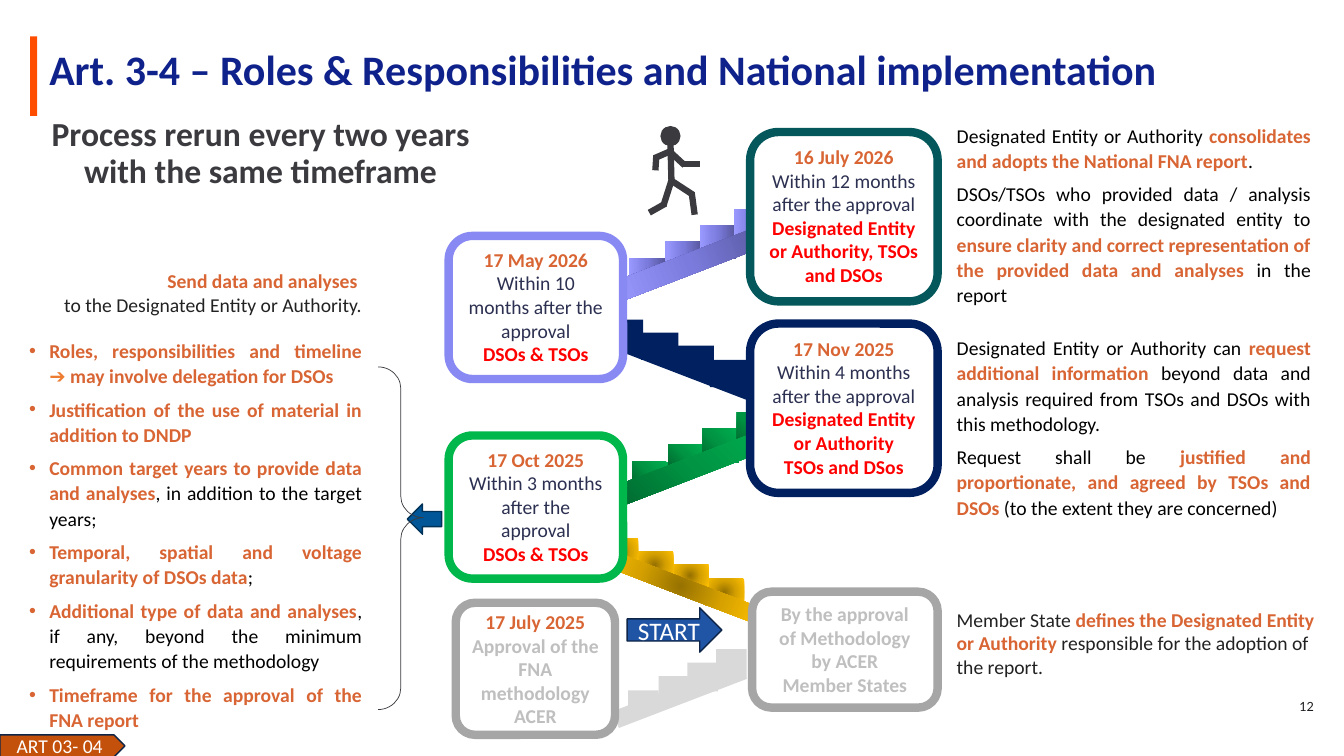
from dataclasses import dataclass
from typing import Any, Optional, Union

from lxml.etree import SubElement
from pptx import Presentation
from pptx.dml.color import RGBColor as Rgb
from pptx.enum.shapes import MSO_CONNECTOR as Connector, MSO_SHAPE as Preset
from pptx.enum.text import MSO_ANCHOR as Anchor, PP_ALIGN as Align
from pptx.oxml import parse_xml
from pptx.oxml.ns import nsdecls, qn
from pptx.util import Inches, Pt

COLORS = {
    "white": "FFFFFF", "black": "000000", "ink": "222222", "number": "1D1D20",
    "charcoal": "3A3A3F", "title": "0F218B", "bar": "FF4D00", "accent": "D86533",
    "pointer": "ED7D31", "deadline": "2C3051", "actor": "FF0000", "muted": "BFBFBF",
    "gray": "A6A6A6", "light": "D9D9D9", "green": "00B74C", "navy": "002060",
    "violet": "8989F4", "teal": "04585C", "back": "005696", "back_edge": "003258",
    "start": "2054A5", "edge": "0E2548", "tag": "C4510B",
}
BOLD_TONES = {"accent", "pointer", "actor", "muted", "title", "charcoal"}


@dataclass
class Gradient:
    stops: tuple[str, str, str]
    shade: str


@dataclass
class Para:
    spans: list[tuple[str, str]]  # (text, tone)
    size: float = 14
    font: str = "Calibri"
    align: Any = Align.LEFT
    spacing: Any = None
    after: float = 0
    bullet: bool = False


@dataclass
class Stairs:
    left: float
    top: float
    scale: float
    profile: list[tuple[float, float, float, float, float]]
    fill: Union[str, Gradient]


@dataclass
class Milestone:
    box: tuple[float, float, float, float]
    edge: str
    lines: list[tuple[str, str]]
    anchor: Any = Anchor.TOP
    corner: float = 0.167


def apply(target: Any, values: dict[str, Any]) -> None:
    for key, value in values.items():
        setattr(target, key, value)


def rgb(tone: str) -> Rgb:
    return Rgb.from_string(COLORS[tone])


def write(holder: Any, paras: list[Para], anchor: Any = Anchor.TOP, wrap: bool = True) -> None:
    frame = holder.text_frame
    apply(frame, {"word_wrap": wrap, "vertical_anchor": anchor})
    for index, para in enumerate(paras):
        line = frame.paragraphs[0] if index == 0 else frame.add_paragraph()
        apply(line, {"alignment": para.align, "line_spacing": para.spacing})
        if para.after:
            line.space_after = Pt(para.after)
        if para.bullet:
            props = line._p.get_or_add_pPr()
            props.set("marL", str(Inches(0.39)))
            props.set("indent", str(Inches(-0.2)))
            SubElement(props, qn("a:buFont"), typeface="Arial")
            SubElement(props, qn("a:buChar"), char="•")
        for text, tone in para.spans:
            for part, piece in enumerate(text.split("\n")):
                if part:
                    line.add_line_break()
                if piece:
                    run = line.add_run()
                    run.text = piece
                    apply(run.font, {"size": Pt(para.size), "name": para.font,
                                     "bold": tone in BOLD_TONES})
                    run.font.color.rgb = rgb(tone)


def add_text(slide: Any, box: tuple, paras: list[Para], anchor: Any = Anchor.TOP) -> None:
    write(slide.shapes.add_textbox(*map(Inches, box)), paras, anchor)


def add_block(slide: Any, preset: Any, box: tuple, fill: Union[str, Gradient, None],
              edge: Optional[str] = None, weight: float = 1, angle: float = 0,
              adjust: tuple = ()) -> Any:
    block = slide.shapes.add_shape(preset, *map(Inches, box))
    apply(block, {"rotation": angle})
    block.shadow.inherit = False
    for index, value in enumerate(adjust):
        block.adjustments[index] = value
    if isinstance(fill, Gradient):
        stops = "".join(f'<a:gs pos="{pos}"><a:srgbClr val="{color}"/></a:gs>'
                        for pos, color in zip((0, 50000, 100000), fill.stops))
        block._element.spPr.insert(2, parse_xml(
            f'<a:gradFill {nsdecls("a")} rotWithShape="1"><a:gsLst>{stops}</a:gsLst>'
            f'{fill.shade}</a:gradFill>'))
    elif fill:
        block.fill.solid()
        block.fill.fore_color.rgb = rgb(fill)
    else:
        block.fill.background()
    if edge:
        block.line.color.rgb = rgb(edge)
        block.line.width = Pt(weight)
    else:
        block.line.fill.background()
    return block


def add_limb(slide: Any, ends: tuple[float, float, float, float]) -> None:
    limb = slide.shapes.add_connector(Connector.STRAIGHT, *map(Inches, ends))
    limb.line.color.rgb = rgb("charcoal")
    limb.line.width = Pt(4.5)
    SubElement(limb._element.spPr, qn("a:effectLst"))


def circle_shade(left: int, top: int, right: int, bottom: int) -> str:
    return (f'<a:path path="circle"><a:fillToRect l="{left}000" t="{top}000" '
            f'r="{right}000" b="{bottom}000"/></a:path>')


# Stair profiles: offset x, offset y, width, height, rotation; the ramp is last
ASCENT = [(0, 0, 0.36, 0.23, 0), (0.36, -0.17, 0.36, 0.24, 0), (0.7, -0.33, 0.36, 0.34, 0),
          (1.04, -0.49, 0.36, 0.34, 0), (-0.2, -0.05, 1.62, 0.21, 339)]
DESCENT = [(1.03, 0.4, 0.39, 0.27, 0), (0.7, 0.26, 0.37, 0.22, 0), (0.35, 0.13, 0.37, 0.27, 0),
           (0, 0, 0.37, 0.27, 0), (-0.03, 0.39, 1.64, 0.17, 21)]
STAIRS = [
    Stairs(6.24, 2.56, 1, ASCENT, Gradient(("56569C", "7B7BDD", "9999FF"),
                                           '<a:lin ang="10800000" scaled="1"/>')),
    Stairs(6.01, 3.17, 1, DESCENT, "navy"),
    Stairs(6.27, 4.58, 1, ASCENT, Gradient(("00682F", "009443", "00B050"),
                                           circle_shade(0, 100, 100, 0))),
    Stairs(6.23, 6.85, 0.84, ASCENT, "light"),
    Stairs(5.96, 5.34, 1, DESCENT, Gradient(("977200", "D7A200", "FFC000"),
                                            circle_shade(50, 50, 50, 50))),
]

MILESTONES = [
    Milestone((4.52, 5.98, 1.58, 1.31), "gray", [
        ("17 July 2025", "accent"), ("Approval of the FNA methodology ACER", "muted")],
        Anchor.MIDDLE, 0.145),
    Milestone((7.46, 5.87, 1.84, 1.15), "gray", [
        (text, "muted") for text in
        ("By the approval", "of Methodology", "by ACER", "Member States")]),
    Milestone((4.45, 4.32, 1.73, 1.42), "green", [
        ("17 Oct 2025", "accent"), ("Within 3 months after the approval", "deadline"),
        ("DSOs & TSOs", "actor")]),
    Milestone((7.44, 3.21, 1.86, 1.68), "navy", [
        ("17 Nov 2025", "accent"), ("Within 4 months after the approval", "deadline"),
        ("Designated Entity or Authority", "actor"), ("TSOs and DSos", "actor")]),
    Milestone((4.45, 2.34, 1.73, 1.42), "violet", [
        ("17 May 2026", "accent"), ("Within 10 months after the approval", "deadline"),
        ("DSOs & TSOs", "actor")]),
    Milestone((7.44, 1.31, 1.86, 1.68), "teal", [
        ("16 July 2026", "accent"), ("Within 12 months after the approval", "deadline"),
        ("Designated Entity or Authority, TSOs and DSOs", "actor")]),
]

DUTIES = [
    [("Roles, responsibilities and timeline\n", "accent"), ("➔ ", "pointer"),
     ("may involve delegation for DSOs", "accent")],
    [("Justification of the use of material in addition to DNDP", "accent")],
    [("Common target years to provide data and analyses", "accent"),
     (", in addition to the target years;", "black")],
    [("Temporal, spatial and voltage granularity of DSOs data", "accent"), (";", "black")],
    [("Additional type of data and analyses", "accent"),
     (", if any, beyond the minimum requirements of the methodology", "black")],
    [("Timeframe for the approval of the FNA report", "accent")],
]
REQUEST = [
    [("Designated Entity or Authority can ", "black"),
     ("request additional information ", "accent"),
     ("beyond data and analysis required from TSOs and DSOs with this methodology.", "black")],
    [("Request shall be ", "black"),
     ("justified and proportionate, and agreed by TSOs and DSOs ", "accent"),
     ("(to the extent they are concerned)", "black")],
]
REPORT = [
    [("Designated Entity or Authority ", "black"),
     ("consolidates and adopts the National FNA report", "accent"), (".", "black")],
    [("DSOs/TSOs who provided data / analysis coordinate with the designated entity to ", "black"),
     ("ensure clarity and correct representation of the provided data and analyses", "accent"),
     (" in the report", "black")],
]
LIMBS = [
    (6.65, 1.43, 6.66, 1.81), (6.86, 1.91, 6.89, 2.13), (6.64, 1.78, 6.87, 1.93),
    (6.49, 1.57, 6.65, 1.5), (6.5, 1.69, 6.51, 1.54), (6.66, 1.52, 6.79, 1.64),
    (6.77, 1.63, 6.94, 1.63), (6.58, 2.04, 6.66, 1.79), (6.44, 2.11, 6.6, 2.02),
]


def main() -> None:
    deck = Presentation()
    apply(deck, {"slide_width": Inches(13.33), "slide_height": Inches(7.5)})
    slide = deck.slides.add_slide(deck.slide_layouts[6])

    # Heading and page number
    add_text(slide, (6.75, 6.82, 6.38, 0.4), [
        Para([("12", "number")], 9, "Lato", Align.RIGHT, Pt(9))], Anchor.MIDDLE)
    add_block(slide, Preset.RECTANGLE, (0.3, 0.36, 0.07, 0.79), "bar")
    add_text(slide, (0.39, 0.51, 12.71, 0.39), [
        Para([("Art. 3-4 – Roles & Responsibilities and National implementation", "title")],
             30, spacing=Pt(32))], Anchor.MIDDLE)
    add_text(slide, (0.3, 1.12, 4.57, 0.52), [
        Para([("Process rerun every two years with the same timeframe", "charcoal")],
             24, align=Align.CENTER, spacing=0.9)])

    # Staircase and milestones
    for stairs in STAIRS:
        for dx, dy, width, height, angle in stairs.profile:
            k = stairs.scale
            add_block(slide, Preset.RECTANGLE,
                      (stairs.left + k * dx, stairs.top + k * dy, k * width, k * height),
                      stairs.fill, angle=angle)
    for stone in MILESTONES:
        card = add_block(slide, Preset.ROUNDED_RECTANGLE, stone.box, "white", stone.edge, 6,
                         adjust=(stone.corner,))
        write(card, [Para([line], align=Align.CENTER) for line in stone.lines], stone.anchor)

    # Explanations beside the staircase
    add_text(slide, (9.39, 5.98, 3.76, 0.81), [Para([
        ("Member State ", "ink"), ("defines the Designated Entity or Authority", "accent"),
        (" responsible for the adoption of the report.", "ink")])])
    add_text(slide, (0.34, 2.62, 3.35, 0.57), [Para([
        ("Send data and analyses \n", "accent"),
        ("to the Designated Entity or Authority.", "ink")], align=Align.RIGHT)])
    for box, content, anchor, bullet in (
            ((0, 3.28, 3.69, 4.04), DUTIES, Anchor.MIDDLE, True),
            ((9.39, 3.27, 3.71, 1.94), REQUEST, Anchor.TOP, False),
            ((9.39, 1.16, 3.71, 1.94), REPORT, Anchor.TOP, False)):
        add_text(slide, box, [Para(spans, align=Align.JUSTIFY, spacing=1.07, after=6,
                                   bullet=bullet) for spans in content], anchor)

    # Walking figure
    add_block(slide, Preset.OVAL, (6.55, 1.25, 0.2, 0.2), "charcoal")
    for ends in LIMBS:
        add_limb(slide, ends)

    # Arrows, brace and article tag
    add_block(slide, Preset.LEFT_ARROW, (4.04, 5, 0.34, 0.3), "back", "back_edge")
    add_block(slide, Preset.RIGHT_BRACE, (3.75, 3.64, 0.45, 3.4), None, "charcoal", 0.5,
              adjust=(0.476, 0.44))
    for preset, box, fill, label, size in (
            (Preset.RIGHT_ARROW, (6.22, 6.03, 0.94, 0.44), "start", "START", 18),
            (Preset.PENTAGON, (0, 7.29, 1.24, 0.22), "tag", "ART 03- 04", 14)):
        sign = add_block(slide, preset, box, fill, "edge")
        write(sign, [Para([(label, "white")], size, align=Align.CENTER)], Anchor.MIDDLE, False)

    deck.save("out.pptx")


if __name__ == "__main__":
    main()
